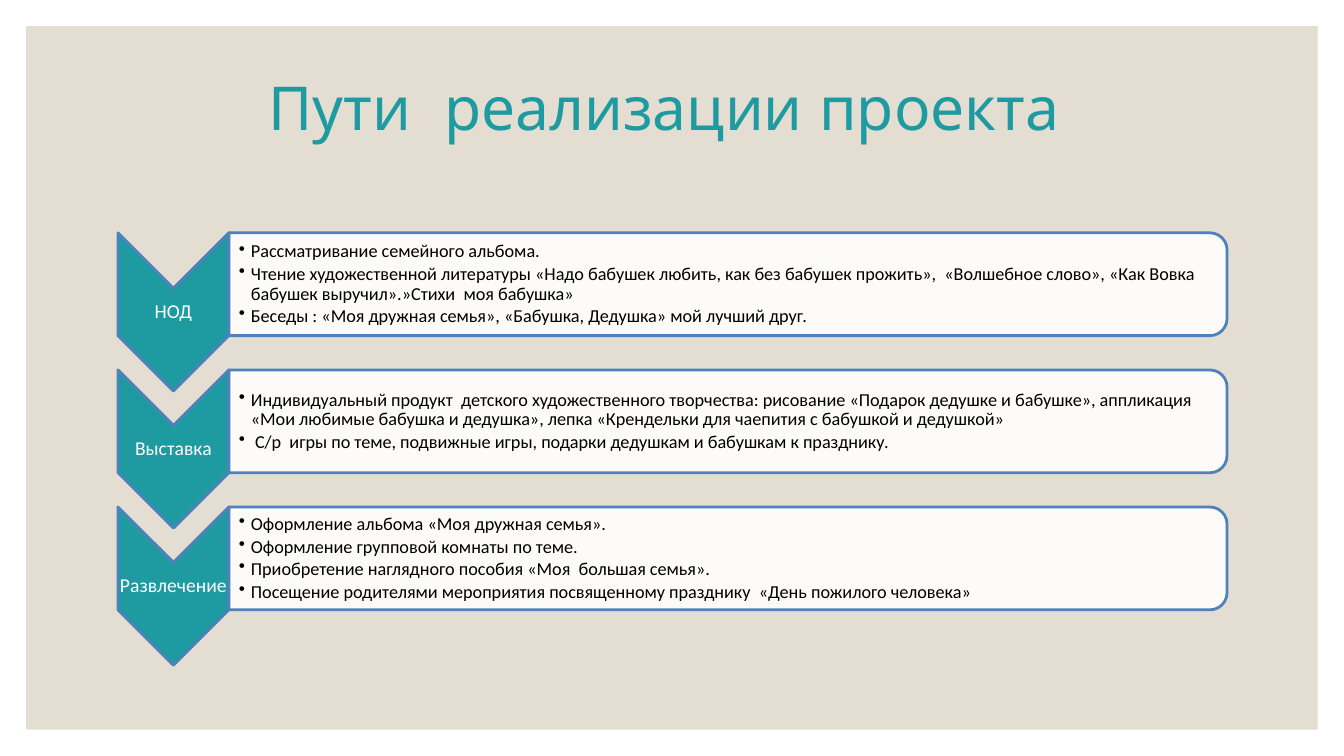
from lxml import etree
from pptx import Presentation
from pptx.dml.color import RGBColor
from pptx.enum.shapes import MSO_SHAPE
from pptx.enum.text import MSO_ANCHOR, MSO_AUTO_SIZE, PP_ALIGN
from pptx.oxml.ns import qn
from pptx.util import Inches, Pt

RECTANGLE = MSO_SHAPE.RECTANGLE
CHEVRON = MSO_SHAPE.CHEVRON
ROUND_TOP = MSO_SHAPE.ROUND_2_SAME_RECTANGLE
MIDDLE = MSO_ANCHOR.MIDDLE
CENTER = PP_ALIGN.CENTER
LEFT = PP_ALIGN.LEFT
NO_AUTOFIT = MSO_AUTO_SIZE.NONE
TITLE_ONLY = 5

COLORS = {
    "sand": "E3DED1",
    "teal": "1D9BA1",
    "outline": "4F81BD",
    "white": "FFFFFF",
    "black": "000000",
}
TITLE_FONT, BODY_FONT = "Quicksand", "Calibri"

SLIDE_W, SLIDE_H = 13.33, 7.5
FRAME = 0.26
# Grid of the stages: an arrow column, a card column and equal rows
ARROW_X, ARROW_W, ARROW_H = 1.17, 1.1, 1.57
CARD_X, CARD_W, CARD_H = ARROW_X + ARROW_W, 9.9, 1.02
FIRST_ROW_Y, ROW_PITCH = 2.31, 1.36
LABEL_H, CARD_TEXT_H = 0.47, 0.92
INDENT, THIN_INSET = 0.12, 0.01

TITLE = "Пути  реализации проекта "
STAGES = [
    ("НОД", [
        "Рассматривание семейного альбома.",
        "Чтение художественной литературы «Надо бабушек любить, как без бабушек "
        "прожить»,  «Волшебное слово», «Как Вовка бабушек выручил».»Стихи  моя бабушка»",
        "Беседы : «Моя дружная семья», «Бабушка, Дедушка» мой лучший друг.",
    ]),
    ("Выставка", [
        "Индивидуальный продукт  детского художественного творчества: рисование "
        "«Подарок дедушке и бабушке», аппликация  «Мои любимые бабушка и дедушка», "
        "лепка «Крендельки для чаепития с бабушкой и дедушкой»",
        " С/р  игры по теме, подвижные игры, подарки дедушкам и бабушкам к празднику.",
    ]),
    ("Развлечение ", [
        "Оформление альбома «Моя дружная семья».",
        "Оформление групповой комнаты по теме.",
        "Приобретение наглядного пособия «Моя  большая семья».",
        "Посещение родителями мероприятия посвященному празднику  "
        "«День пожилого человека»",
    ]),
]


def rgb(color):
    return RGBColor.from_string(COLORS[color])


def box(x, y, width, height):
    return [Inches(value) for value in (x, y, width, height)]


def add_filled(slide, preset, bounds, fill, outline=None):
    shape = slide.shapes.add_shape(preset, *box(*bounds))
    shape.shadow.inherit = False
    shape.fill.solid()
    shape.fill.fore_color.rgb = rgb(fill)
    if outline:
        shape.line.color.rgb = rgb(outline)
        shape.line.width = Pt(2)
    else:
        shape.line.fill.background()
    return shape


def add_turned(slide, preset, bounds, fill):
    """Add a shape turned by 90 degrees; bounds are those seen after turning."""
    x, y, width, height = bounds
    shift = (width - height) / 2
    shape = add_filled(slide, preset, (x + shift, y - shift, height, width), fill, "outline")
    shape.rotation = 90
    return shape


def set_opacity(shape, percent):
    color = shape.fill._xPr.find(f".//{qn('a:srgbClr')}")
    etree.SubElement(color, qn("a:alpha")).set("val", str(percent * 1000))


def add_bullet(paragraph):
    properties = paragraph._p.get_or_add_pPr()
    properties.set("marL", str(Inches(INDENT)))
    properties.set("indent", str(-Inches(INDENT)))
    etree.SubElement(properties, qn("a:buChar")).set("char", "•")


def write(paragraph, text, font, size, color, align):
    paragraph.alignment = align
    paragraph.line_spacing = 0.9
    run = paragraph.add_run()
    run.text = text
    run.font.name = font
    run.font.size = Pt(size)
    run.font.color.rgb = rgb(color)


def add_text_frame(slide, bounds, left_inset=THIN_INSET):
    frame = slide.shapes.add_textbox(*box(*bounds)).text_frame
    frame.word_wrap = True
    frame.vertical_anchor = MIDDLE
    frame.margin_left = Inches(left_inset)
    frame.margin_top = frame.margin_right = frame.margin_bottom = Inches(THIN_INSET)
    return frame


def add_background(slide):
    panel = add_filled(
        slide, RECTANGLE,
        (FRAME, FRAME, SLIDE_W - 2 * FRAME, SLIDE_H - 2 * FRAME), "sand")
    slide.shapes._spTree.insert(2, panel._element)


def set_title(slide):
    title = slide.shapes.title
    title.left, title.top, title.width, title.height = box(1.17, 0.7, 11, 0.8)
    frame = title.text_frame
    frame.auto_size = NO_AUTOFIT
    frame.vertical_anchor = MIDDLE
    write(frame.paragraphs[0], TITLE, TITLE_FONT, 43.2, "teal", CENTER)


def add_arrow(slide, y, label):
    add_turned(slide, CHEVRON, (ARROW_X, y, ARROW_W, ARROW_H), "teal")
    label_y = y + (ARROW_H - LABEL_H) / 2
    frame = add_text_frame(slide, (ARROW_X, label_y, ARROW_W, LABEL_H))
    write(frame.paragraphs[0], label, BODY_FONT, 14, "white", CENTER)


def add_card(slide, y, activities):
    card = add_turned(slide, ROUND_TOP, (CARD_X, y, CARD_W, CARD_H), "white")
    set_opacity(card, 90)
    text_y = y + (CARD_H - CARD_TEXT_H) / 2
    frame = add_text_frame(slide, (CARD_X, text_y, CARD_W - 0.05, CARD_TEXT_H), 0.1)
    for index, activity in enumerate(activities):
        paragraph = frame.add_paragraph() if index else frame.paragraphs[0]
        write(paragraph, activity, BODY_FONT, 13, "black", LEFT)
        paragraph.space_after = Pt(2)
        add_bullet(paragraph)


def main():
    presentation = Presentation()
    presentation.slide_width = Inches(SLIDE_W)
    presentation.slide_height = Inches(SLIDE_H)
    slide = presentation.slides.add_slide(presentation.slide_layouts[TITLE_ONLY])
    add_background(slide)
    set_title(slide)
    for row, (label, activities) in enumerate(STAGES):
        y = FIRST_ROW_Y + row * ROW_PITCH
        add_arrow(slide, y, label)
        add_card(slide, y, activities)
    presentation.save("out.pptx")


if __name__ == "__main__":
    main()
